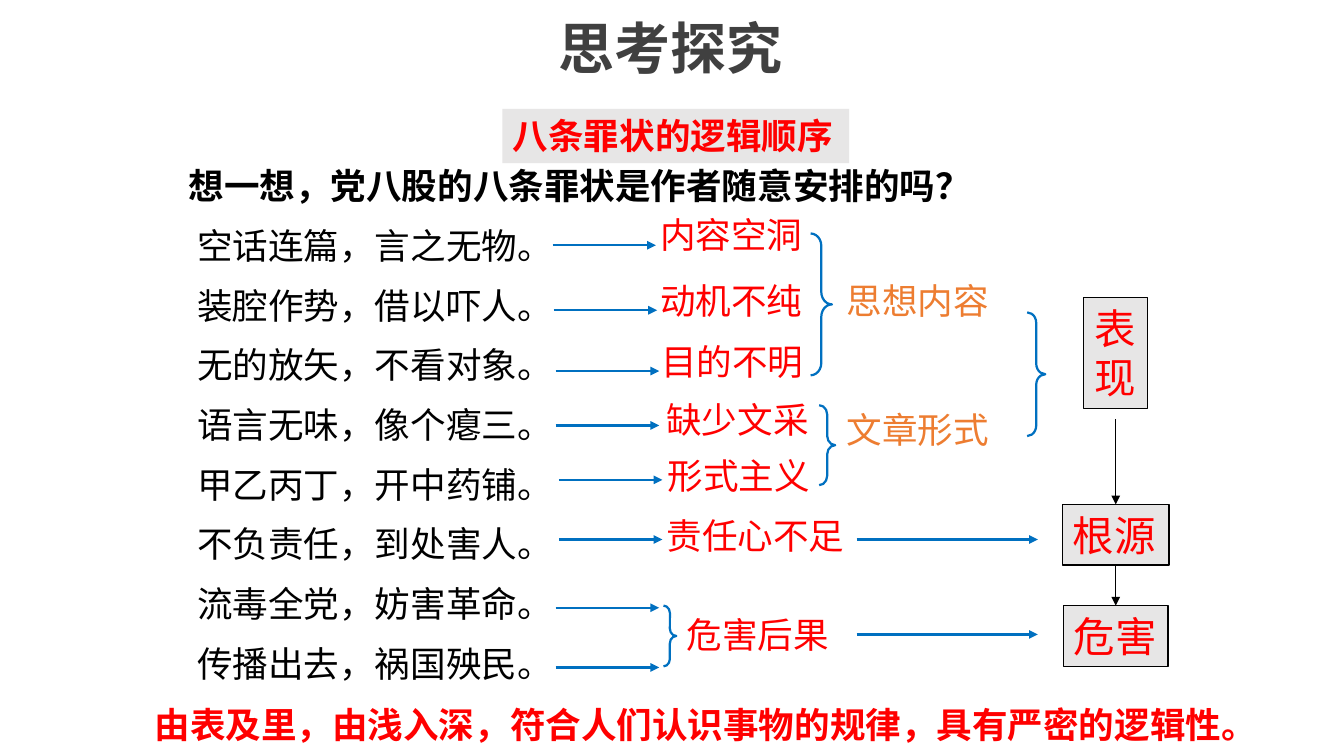
import pptx
import pptx.dml.color
import pptx.enum.shapes
import pptx.enum.text
import pptx.oxml
import pptx.oxml.ns
import pptx.util
from pptx.util import Inches

RED, BLACK, BLUE, ORANGE, GREY = "FF0000", "000000", "0070C0", "ED7D31", "E7E6E6"
SANS, SERIF = "Noto Sans CJK SC", "Times New Roman"
SHAPE = pptx.enum.shapes.MSO_SHAPE
ANCHOR = pptx.enum.text.MSO_ANCHOR
ALIGN = pptx.enum.text.PP_ALIGN
rgb = pptx.dml.color.RGBColor.from_string


def write(shape, text, size, color, bold=False, font=SANS, spacing=1.0,
          wrap=True, align=ALIGN.LEFT, anchor=ANCHOR.TOP):
    """Fill a shape with text, one paragraph a line, in one format."""
    frame = shape.text_frame
    frame.text = text
    frame.word_wrap = wrap
    frame.vertical_anchor = anchor
    for paragraph in frame.paragraphs:
        paragraph.line_spacing = spacing
        paragraph.alignment = align
        for run in paragraph.runs:
            run.font.size = pptx.util.Pt(size)
            run.font.bold = bold
            run.font.name = font
            run.font.color.rgb = rgb(color)
            east_asian = pptx.oxml.parse_xml(
                f'<a:ea {pptx.oxml.ns.nsdecls("a")} typeface="{SANS}"/>')
            run.font._element.find(pptx.oxml.ns.qn("a:latin")).addnext(east_asian)


def add_arrow(x1, y1, x2, y2, color, width):
    arrow = slide.shapes.add_connector(
        pptx.enum.shapes.MSO_CONNECTOR.STRAIGHT,
        Inches(x1), Inches(y1), Inches(x2), Inches(y2))
    arrow.line.color.rgb = rgb(color)
    arrow.line.width = pptx.util.Pt(width)
    namespace = pptx.oxml.ns.nsdecls("a")
    arrow.line._get_or_add_ln().append(
        pptx.oxml.parse_xml(f'<a:tailEnd {namespace} type="triangle"/>'))
    arrow._element.spPr.append(pptx.oxml.parse_xml(f'<a:effectLst {namespace}/>'))
    return arrow


deck = pptx.Presentation()
deck.slide_width, deck.slide_height = Inches(12.6), Inches(7.09)
slide = deck.slides.add_slide(deck.slide_layouts[5])

title = slide.shapes.title
title.left, title.top, title.width, title.height = map(Inches, (0.85, 0.02, 10.87, 0.85))
write(title, "思考探究", 37.8, "404040", bold=True, font=SERIF,
      align=ALIGN.CENTER, anchor=ANCHOR.MIDDLE)

charges = slide.shapes.add_textbox(Inches(1.75), Inches(1.89), Inches(3.78), Inches(4.73))
write(charges, "\n".join([
    "空话连篇，言之无物。",
    "装腔作势，借以吓人。",
    "无的放矢，不看对象。",
    "语言无味，像个瘪三。",
    "甲乙丙丁，开中药铺。",
    "不负责任，到处害人。",
    "流毒全党，妨害革命。",
    "传播出去，祸国殃民。",
]), 24, BLACK, spacing=1.4)

# Faults behind the charges, and the groups they form
for text, left, top, width, color, spacing in [
    ("内容空洞", 6.09, 1.95, 1.65, RED, 1.0),
    ("动机不纯", 6.09, 2.61, 1.69, RED, 0.9),
    ("目的不明", 6.1, 3.14, 1.71, RED, 1.0),
    ("缺少文采", 6.15, 3.68, 1.64, RED, 1.0),
    ("形式主义", 6.16, 4.21, 1.58, RED, 1.0),
    ("责任心不足", 6.15, 4.77, 1.88, RED, 1.0),
    ("危害后果", 6.34, 5.7, 1.54, RED, 1.0),
    ("思想内容", 7.84, 2.57, 1.71, ORANGE, 1.0),
    ("文章形式", 7.84, 3.78, 1.89, ORANGE, 1.0),
]:
    label = slide.shapes.add_textbox(Inches(left), Inches(top), Inches(width), Inches(0.51))
    write(label, text, 24, color, spacing=spacing)

for left, top, width, height in [
    (7.6, 2.19, 0.2, 1.33),
    (7.68, 3.8, 0.15, 0.75),
    (6.22, 5.68, 0.12, 0.57),
    (9.63, 2.93, 0.17, 1.16),
]:
    brace = slide.shapes.add_shape(
        SHAPE.RIGHT_BRACE, Inches(left), Inches(top), Inches(width), Inches(height))
    brace.adjustments[0] = 0.58
    brace.shadow.inherit = False
    brace.fill.background()
    brace.line.color.rgb = rgb(BLUE)
    brace.line.width = pptx.util.Pt(1.5)

# Stages of the argument, centred on one vertical axis
axis = 10.46
stages = []
for text, top, width, height in [
    ("表\n现", 2.79, 0.6, 1.04),
    ("根源", 4.73, 1, 0.57),
    ("危害", 5.68, 0.98, 0.57),
]:
    stage = slide.shapes.add_shape(
        SHAPE.RECTANGLE, Inches(axis - width / 2), Inches(top), Inches(width), Inches(height))
    stage.shadow.inherit = False
    stage.fill.solid()
    stage.fill.fore_color.rgb = rgb(GREY)
    stage.line.color.rgb = rgb(BLACK)
    stage.line.width = pptx.util.Pt(0.75)
    write(stage, text, 28, RED, wrap=False)
    stages.append(stage)
expression, root, harm = stages

to_root = add_arrow(axis, 3.93, axis, 4.73, BLACK, 0.75)
to_root.end_connect(root, 0)
to_harm = add_arrow(axis, 5.3, axis, 5.68, BLACK, 0.75)
to_harm.begin_connect(root, 2)
to_harm.end_connect(harm, 0)

for left, y in [(5.18, 2.3), (5.19, 2.91), (5.21, 3.48), (5.21, 3.99),
                (5.24, 4.5), (5.24, 5.06), (5.21, 5.7), (5.21, 6.26)]:
    add_arrow(left, y, left + 0.97, y, BLUE, 1.5)
for y in (5.06, 5.95):
    add_arrow(8.03, y, 9.73, y, BLUE, 1.5)

heading = slide.shapes.add_shape(
    SHAPE.RECTANGLE, Inches(4.71), Inches(1.02), Inches(3.25), Inches(0.51))
heading.shadow.inherit = False
heading.fill.solid()
heading.fill.fore_color.rgb = rgb(GREY)
heading.line.fill.background()
write(heading, "八条罪状的逻辑顺序", 24, RED, bold=True)

question = slide.shapes.add_textbox(Inches(1.67), Inches(1.49), Inches(7.65), Inches(0.51))
write(question, "想一想，党八股的八条罪状是作者随意安排的吗？", 24, BLACK, bold=True)

conclusion = slide.shapes.add_textbox(Inches(0.39), Inches(6.34), Inches(11.79), Inches(0.63))
write(conclusion, "由表及里，由浅入深，符合人们认识事物的规律，具有严密的逻辑性。",
      24, RED, bold=True, font=SERIF, spacing=1.5)
conclusion.text_frame.paragraphs[0]._p.get_or_add_pPr().set("indent", str(Inches(0.96)))

deck.save("out.pptx")
